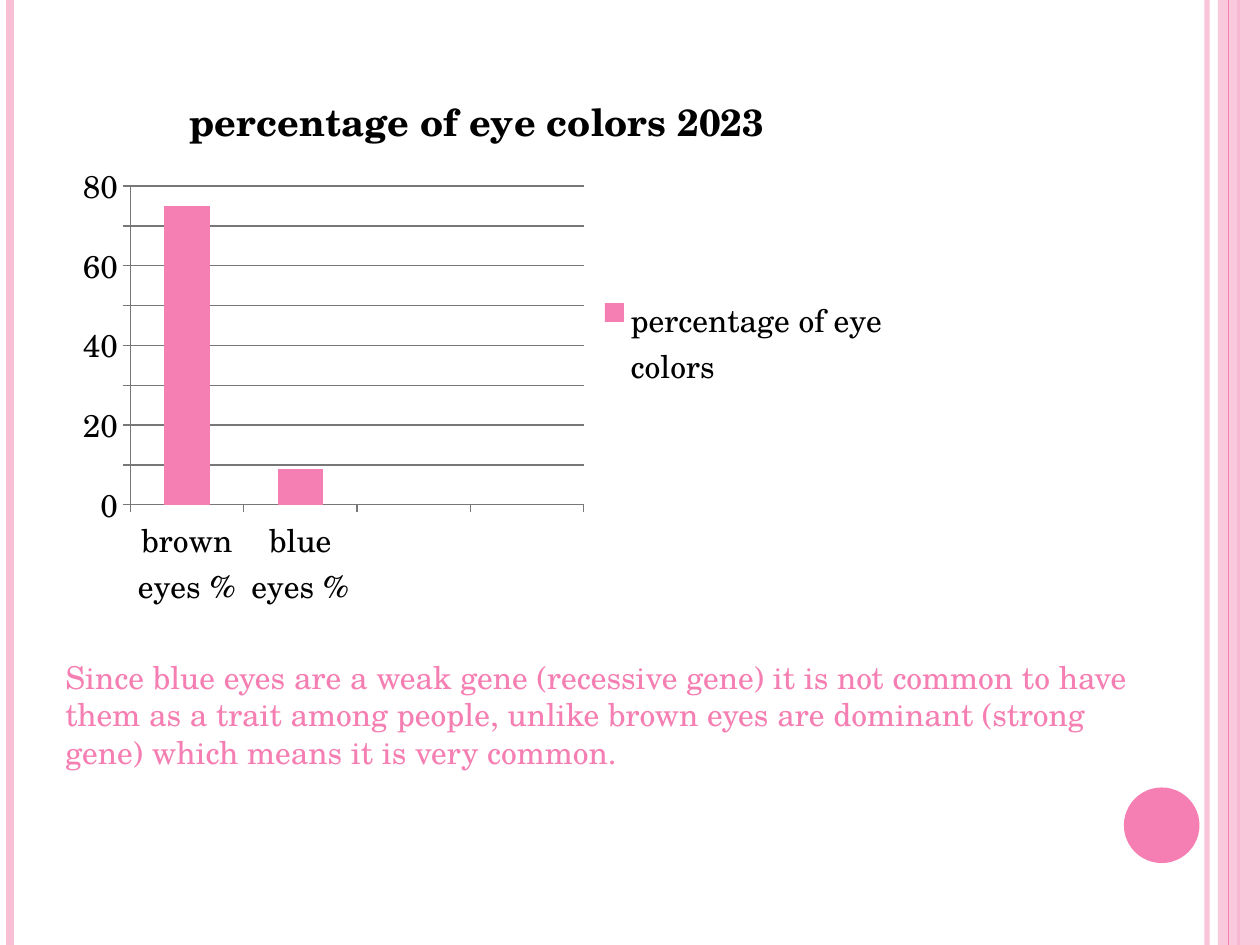
from lxml import etree
from pptx import Presentation
from pptx.chart.data import CategoryChartData
from pptx.dml.color import RGBColor
from pptx.enum import chart as ch, shapes
from pptx.oxml import parse_xml
from pptx.oxml.ns import nsdecls, qn
from pptx.util import Pt

THEME = {
    "font": "TeX Gyre Schola", "pink": "F57FB2", "pale": "F9C0D5",
    "black": "000000", "grid": "777777", "body": 18, "title": 21.6,
}
WIDTH, HEIGHT = 720, 540

TITLE = "percentage of eye colors 2023 "
SERIES = "percentage of eye colors "
EYES = [("brown eyes %", 75), ("blue eyes %", 9), ("", None), ("", None)]
EXPLANATION = (
    "Since blue eyes are a weak gene (recessive gene) it is not common to have "
    "them as a trait among people, unlike brown eyes are dominant (strong gene) "
    "which means it is very common."
)
# Stripe: x, colour, line width, opacity in percent
STRIPES_BEHIND = [(689.76, "pale", 3, 93), (5.76, "pale", 4.5, 100), (707.76, "pink", 1.5, 100)]
STRIPES_FRONT = [(702, "pink", 0.75, 100)]
BAND = (696, 0, 24, HEIGHT)
DOT = (642.24, 450, 43.2, 43.2)
CHART = (36, 36, 480, 319.68)
PLOT = {"x": 0.08, "y": 0.22, "w": 0.54, "h": 0.57}  # fractions of the chart
NOTE = (30.24, 372.24, 635.76, 72.72)


def rgb(name):
    return RGBColor.from_string(THEME[name])


def set_opacity(part, percent):
    if percent < 100:
        color = part.find(".//" + qn("a:srgbClr"))
        etree.SubElement(color, qn("a:alpha"), val=str(percent * 1000))


def style_font(font, size="body", color="black", bold=False):
    font.name, font.size, font.bold = THEME["font"], Pt(THEME[size]), bold
    font.color.rgb = rgb(color)


def write(frame, content, **style):
    paragraph = frame.paragraphs[0]
    run = paragraph.add_run()
    run.text = content
    style_font(run.font, **style)


def add_stripe(slide, x, color, width, opacity):
    stripe = slide.shapes.add_connector(shapes.MSO_CONNECTOR.STRAIGHT, Pt(x), 0, Pt(x), Pt(HEIGHT))
    stripe.line.color.rgb = rgb(color)
    stripe.line.width = Pt(width)
    properties = stripe._element.spPr
    set_opacity(properties, opacity)
    etree.SubElement(properties, qn("a:effectLst"))


def add_filled(slide, kind, box, color, opacity=100):
    shape = slide.shapes.add_shape(kind, *map(Pt, box))
    shape.shadow.inherit = False
    shape.fill.solid()
    shape.fill.fore_color.rgb = rgb(color)
    shape.line.fill.background()
    set_opacity(shape._element.spPr, opacity)


def place_plot(chart):
    """Fix the inner plot area at the fractions given in PLOT."""
    area = chart._chartSpace.find(".//" + qn("c:plotArea"))
    for old in area.findall(qn("c:layout")):
        area.remove(old)
    places = "".join(f'<c:{key} val="{value}"/>' for key, value in PLOT.items())
    area.insert(0, parse_xml(
        f'<c:layout {nsdecls("c")}><c:manualLayout><c:layoutTarget val="inner"/>'
        f'<c:xMode val="edge"/><c:yMode val="edge"/>{places}</c:manualLayout></c:layout>'))


def add_eye_chart(slide):
    data = CategoryChartData()
    data.categories = [eye for eye, _ in EYES]
    data.add_series(SERIES, [share for _, share in EYES])
    chart = slide.shapes.add_chart(ch.XL_CHART_TYPE.COLUMN_STACKED, *map(Pt, CHART), data).chart
    style_font(chart.font)
    chart.has_title = True
    write(chart.chart_title.text_frame, TITLE, size="title", bold=True)
    chart.chart_title.include_in_layout = False
    chart.has_legend = True
    chart.legend.position = ch.XL_LEGEND_POSITION.RIGHT
    chart.legend.include_in_layout = False

    plot = chart.plots[0]
    plot.gap_width, plot.overlap, plot.vary_by_categories = 150, 100, False
    fill = plot.series[0].format.fill
    fill.solid()
    fill.fore_color.rgb = rgb("pink")

    shares = chart.value_axis
    shares.minimum_scale, shares.maximum_scale, shares.major_unit = 0, 80, 10
    shares.has_major_gridlines = True
    for axis in (shares, chart.category_axis):
        axis.major_tick_mark = ch.XL_TICK_MARK.OUTSIDE
    for part in (shares, chart.category_axis, shares.major_gridlines):
        part.format.line.color.rgb = rgb("grid")
        part.format.line.width = Pt(0.75)
    place_plot(chart)


def main():
    deck = Presentation()
    deck.slide_width, deck.slide_height = Pt(WIDTH), Pt(HEIGHT)
    slide = deck.slides.add_slide(deck.slide_layouts[6])
    for stripe in STRIPES_BEHIND:
        add_stripe(slide, *stripe)
    add_filled(slide, shapes.MSO_SHAPE.RECTANGLE, BAND, "pale", 87)
    for stripe in STRIPES_FRONT:
        add_stripe(slide, *stripe)
    add_filled(slide, shapes.MSO_SHAPE.OVAL, DOT, "pink")
    add_eye_chart(slide)
    note = slide.shapes.add_textbox(*map(Pt, NOTE)).text_frame
    note.word_wrap = True
    write(note, EXPLANATION, color="pink")
    deck.save("out.pptx")


if __name__ == "__main__":
    main()
